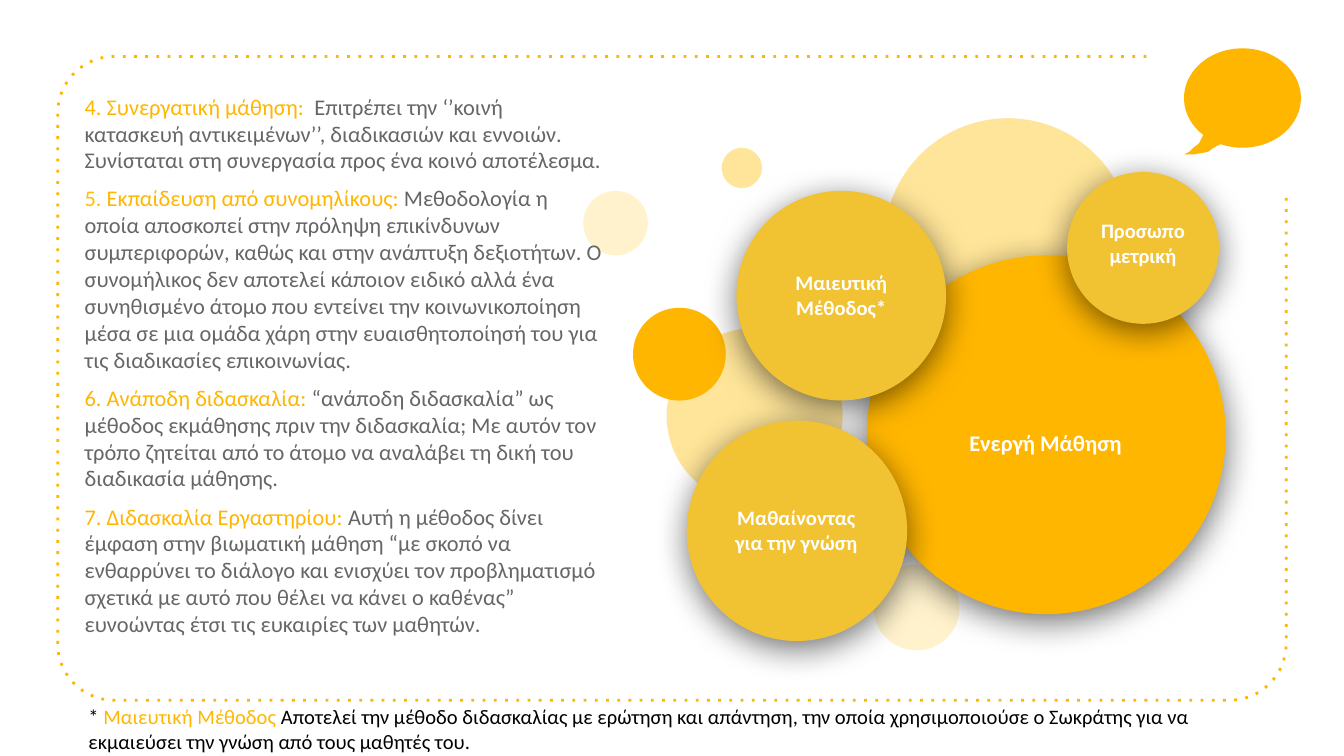
import math

import lxml.etree
import pptx
import pptx.dml.color
import pptx.enum.shapes
import pptx.enum.text
import pptx.oxml.ns
import pptx.util

Inches = pptx.util.Inches
Pt = pptx.util.Pt
RGBColor = pptx.dml.color.RGBColor
Anchor = pptx.enum.text.MSO_ANCHOR
Align = pptx.enum.text.PP_ALIGN

AMBER = RGBColor(0xFF, 0xB6, 0x00)
GOLD = RGBColor(0xFF, 0xC0, 0x00)
MUSTARD = RGBColor(0xF1, 0xC2, 0x32)
SAND = RGBColor(0xFF, 0xE5, 0x99)
CREAM = RGBColor(0xFF, 0xF2, 0xCC)
GREY = RGBColor(0x66, 0x66, 0x66)
BLACK = RGBColor(0x00, 0x00, 0x00)
WHITE = RGBColor(0xFF, 0xFF, 0xFF)

METHODS = [
    [("4. Συνεργατική μάθηση:  ", AMBER),
     ("Επιτρέπει την ‘’κοινή κατασκευή αντικειμένων’’, διαδικασιών και εννοιών. "
      "Συνίσταται στη συνεργασία προς ένα κοινό αποτέλεσμα.", GREY)],
    [("5. ", GOLD), ("Εκπαίδευση από συνομηλίκους: ", AMBER),
     ("Μεθοδολογία η οποία αποσκοπεί στην πρόληψη επικίνδυνων συμπεριφορών, καθώς και "
      "στην ανάπτυξη δεξιοτήτων. Ο συνομήλικος δεν αποτελεί κάποιον ειδικό αλλά ένα "
      "συνηθισμένο άτομο που εντείνει την κοινωνικοποίηση μέσα σε μια ομάδα χάρη στην "
      "ευαισθητοποίησή του για τις διαδικασίες επικοινωνίας.", GREY)],
    [("6. Ανάποδη διδασκαλία:", AMBER),
     (" “ανάποδη διδασκαλία” ως μέθοδος εκμάθησης πριν την διδασκαλία; Με αυτόν τον "
      "τρόπο ζητείται από το άτομο να αναλάβει τη δική του διαδικασία μάθησης.", GREY)],
    [("7. Διδασκαλία Εργαστηρίου: ", AMBER),
     ("Αυτή η μέθοδος δίνει έμφαση στην βιωματική μάθηση “με σκοπό να ενθαρρύνει το "
      "διάλογο και ενισχύει τον προβληματισμό σχετικά με αυτό που θέλει να κάνει ο "
      "καθένας” ευνοώντας έτσι τις ευκαιρίες των μαθητών.", GREY)],
]
FOOTNOTE = [
    [("* ", BLACK), ("Μαιευτική Μέθοδος ", AMBER),
     ("Αποτελεί την μέθοδο διδασκαλίας με ερώτηση και απάντηση, την οποία χρησιμοποιούσε "
      "ο Σωκράτης για να εκμαιεύσει την γνώση από τους μαθητές του.", BLACK)],
]
PLAIN_CIRCLES = [
    (1.79, 3.32, 0.64, CREAM),
    (-0.37, 0.54, 0.48, CREAM),
    (0.25, 1.56, 1.31, SAND),
    (1.87, 0, 1.84, SAND),
    (0, 1.41, 0.69, AMBER),
    (0.66, 0.22, 0.3, SAND),
]
LABELLED_CIRCLES = [
    (1.74, 1.02, 2.67, AMBER, "Ενεργή Μάθηση", 12, (2.05, 1.78, 2.04, 1.27)),
    (0.77, 0.54, 1.56, MUSTARD, "Μαιευτική Μέθοδος*", 11, (1.02, 0.8, 1.06, 1.03)),
    (0.4, 2.25, 1.64, MUSTARD, "Μαθαίνοντας για την γνώση", 11, (0.63, 2.55, 1.17, 1.03)),
    (3.23, 0.4, 1.13, MUSTARD, "Προσωπομετρική", 11, (3.36, 0.55, 0.87, 0.75)),
]


def add_xml(parent, tag, **attributes):
    return lxml.etree.SubElement(parent, pptx.oxml.ns.qn(tag), attributes)


def write_text(frame, paragraphs, size, bold=False, align=Align.LEFT,
               anchor=Anchor.TOP, before=0, indent=0):
    frame.word_wrap = True
    frame.auto_size = pptx.enum.text.MSO_AUTO_SIZE.NONE
    frame.vertical_anchor = anchor
    frame.margin_left = frame.margin_right = Inches(0.1)
    frame.margin_top = frame.margin_bottom = Inches(0.1)
    for number, spans in enumerate(paragraphs):
        para = frame.add_paragraph() if number else frame.paragraphs[0]
        para.alignment = align
        para.space_before = Pt(before)
        properties = para._p.get_or_add_pPr()
        properties.set("marL", str(Inches(indent)))
        properties.set("indent", "0")
        add_xml(properties, "a:buNone")
        for text, colour in spans:
            span = para.add_run()
            span.text = text
            span.font.name = "Calibri"
            span.font.size = Pt(size)
            span.font.bold = bold
            span.font.color.rgb = colour


def add_text_box(page, left, top, width, height, paragraphs, **style):
    box = page.shapes.add_textbox(*map(Inches, (left, top, width, height)))
    write_text(box.text_frame, paragraphs, **style)


def arc(centre_x, centre_y, radius_x, radius_y, start, end, steps):
    angles = [math.radians(start + (end - start) * step / steps) for step in range(steps + 1)]
    return [(centre_x + radius_x * math.cos(angle), centre_y + radius_y * math.sin(angle))
            for angle in angles]


def add_outline(page, points, close):
    points = [(Inches(x), Inches(y)) for x, y in points]
    builder = page.shapes.build_freeform(*points[0], scale=1.0)
    builder.add_line_segments(points[1:], close=close)
    outline = builder.convert_to_shape()
    outline.shadow.inherit = False
    return outline


def add_dotted_frame(page, left, top, width, height):
    radius = 0.42
    right, bottom = left + width, top + height
    inner_left, inner_right = left + radius, right - radius
    inner_top, inner_bottom = top + radius, bottom - radius
    points = [(right - 1.04, top)]
    for x, y, start in ((inner_left, inner_top, 270), (inner_left, inner_bottom, 180),
                        (inner_right, inner_bottom, 90)):
        points += arc(x, y, radius, radius, start, start - 90, 16)
    points.append((right, top + 1.04))
    frame = add_outline(page, points, close=False)
    frame.fill.background()
    frame.line.color.rgb = AMBER
    frame.line.width = Pt(1.5)
    add_xml(frame._element.spPr.find(pptx.oxml.ns.qn("a:ln")), "a:prstDash", val="dot")


def add_speech_bubble(page, left, top, width, height):
    radius_x, radius_y = width / 2, 0.37
    points = arc(left + radius_x, top + radius_y, radius_x, radius_y, 132, 472, 60)
    tail = [(0.22, 0.74), (0.18, 0.77), (0.13, 0.78), (0.07, height), (0, height),
            (0.04, 0.77), (0.07, 0.74), (0.11, 0.71)]
    points += [(left + x, top + y) for x, y in tail]
    bubble = add_outline(page, points, close=True)
    bubble.fill.solid()
    bubble.fill.fore_color.rgb = AMBER
    bubble.line.fill.background()


def add_circle(page, left, top, size, colour, shadow=False):
    circle = page.shapes.add_shape(pptx.enum.shapes.MSO_SHAPE.OVAL,
                                   *map(Inches, (left, top, size, size)))
    circle.shadow.inherit = False
    circle.fill.solid()
    circle.fill.fore_color.rgb = colour
    circle.line.fill.background()
    if shadow:
        effects = circle._element.spPr.find(pptx.oxml.ns.qn("a:effectLst"))
        outer = add_xml(effects, "a:outerShdw", blurRad=str(Pt(18)), dist=str(Pt(4)),
                        dir="5400000", algn="ctr", rotWithShape="0")
        add_xml(add_xml(outer, "a:srgbClr", val=str(BLACK)), "a:alpha", val="55000")


def add_circle_cluster(page, left, top):
    for x, y, size, colour in PLAIN_CIRCLES:
        add_circle(page, left + x, top + y, size, colour)
    for x, y, size, colour, label, points, (box_x, box_y, width, height) in LABELLED_CIRCLES:
        add_circle(page, left + x, top + y, size, colour, shadow=True)
        add_text_box(page, left + box_x, top + box_y, width, height, [[(label, WHITE)]],
                     size=points, bold=True, align=Align.CENTER, anchor=Anchor.MIDDLE)


def place_methods(page, left, top, width, height):
    body = page.placeholders[1]
    body.left, body.top, body.width, body.height = map(Inches, (left, top, width, height))
    write_text(body.text_frame, METHODS, size=12, before=6)
    body._element.getparent().append(body._element)


def main():
    deck = pptx.Presentation()
    deck.slide_width = Inches(10)
    deck.slide_height = deck.slide_width * 9 // 16
    page = deck.slides.add_slide(deck.slide_layouts[1])
    title = page.shapes.title._element
    title.getparent().remove(title)
    add_dotted_frame(page, 0.43, 0.42, 9.14, 4.79)
    add_circle_cluster(page, 4.71, 0.88)
    add_speech_bubble(page, 8.81, 0.36, 0.87, 0.79)
    place_methods(page, 0.53, 0.59, 4.06, 4.61)
    add_text_box(page, 0.41, 5.14, 8.96, 0.57, FOOTNOTE, size=11, indent=0.15)
    deck.save("out.pptx")


if __name__ == "__main__":
    main()
